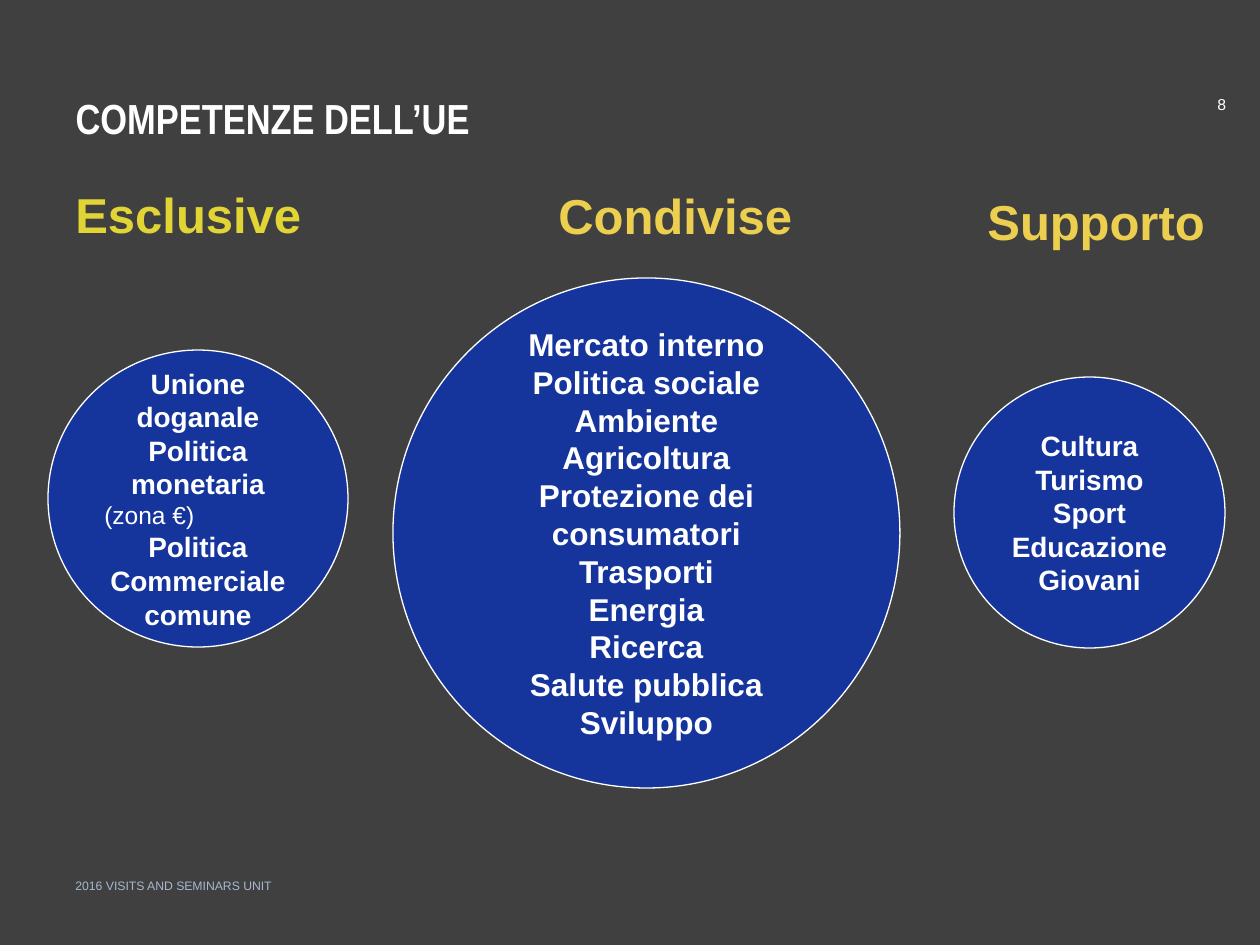
from typing import NamedTuple

from pptx import Presentation
from pptx.dml.color import RGBColor
from pptx.enum.shapes import MSO_SHAPE
from pptx.enum.text import MSO_ANCHOR, MSO_AUTO_SIZE, PP_ALIGN
from pptx.util import Emu, Inches, Pt

GREY = RGBColor(0x40, 0x40, 0x40)
WHITE = RGBColor(0xFF, 0xFF, 0xFF)
STEEL = RGBColor(0xA7, 0xB8, 0xCE)
LIME = RGBColor(0xE1, 0xD4, 0x35)
GOLD = RGBColor(0xEC, 0xCF, 0x4F)
BLUE = RGBColor(0x15, 0x35, 0x9C)
SCALE = Inches(1) / 126


class Box(NamedTuple):
    left: int
    top: int
    width: int
    height: int


class Head(NamedTuple):
    box: Box
    text: str
    color: RGBColor


class Disc(NamedTuple):
    box: Box
    size: int
    lines: list[str]


HEADS = [
    Head(Box(63, 173, 255, 72), "Esclusive", LIME),
    Head(Box(546, 174, 262, 72), "Condivise", GOLD),
    Head(Box(975, 180, 246, 72), "Supporto", GOLD),
]
DISCS = [
    Disc(Box(48, 350, 300, 297), 16, [
        "Unione doganale", "Politica monetaria", "(zona €)",
        "Politica", "Commerciale comune"]),
    Disc(Box(393, 278, 507, 510), 18, [
        "Mercato interno", "Politica sociale", "Ambiente", "Agricoltura",
        "Protezione dei consumatori", "Trasporti", "Energia", "Ricerca",
        "Salute pubblica", "Sviluppo"]),
    Disc(Box(954, 377, 271, 271), 16, [
        "Cultura", "Turismo", "Sport", "Educazione", "Giovani"]),
]


def px(value: int) -> Emu:
    return Emu(round(value * SCALE))


def place(box: Box) -> list[Emu]:
    return [px(value) for value in box]


def style(para, size: int, color: RGBColor, bold: bool, font: str, align) -> None:
    para.alignment = align
    for run in para.runs:
        run.font.size = Pt(size)
        run.font.name = font
        run.font.bold = bold
        run.font.color.rgb = color


def write(frame, text: str, *, size: int, color: RGBColor = WHITE,
          bold: bool = False, font: str = "Arial", align=PP_ALIGN.LEFT,
          anchor=MSO_ANCHOR.TOP, inset: int = 6, wrap: bool = True,
          pitch: float = 1.0) -> None:
    frame.text = text
    frame.word_wrap = wrap
    frame.auto_size = MSO_AUTO_SIZE.NONE
    frame.vertical_anchor = anchor
    frame.margin_top = px(inset)
    for para in frame.paragraphs:
        para.space_before = Pt(0)
        para.line_spacing = pitch
        style(para, size, color, bold, font, align)


def draw_head(slide, head: Head) -> None:
    shape = slide.shapes.add_textbox(*place(head.box))
    write(shape.text_frame, head.text, size=28, color=head.color,
          bold=True, inset=11, wrap=False)


def draw_disc(slide, disc: Disc) -> None:
    shape = slide.shapes.add_shape(MSO_SHAPE.OVAL, *place(disc.box))
    shape.shadow.inherit = False
    shape.fill.solid()
    shape.fill.fore_color.rgb = BLUE
    shape.line.color.rgb = WHITE
    shape.line.width = Pt(0.75)
    write(shape.text_frame, "\n".join(disc.lines), size=disc.size, bold=True,
          align=PP_ALIGN.CENTER, anchor=MSO_ANCHOR.MIDDLE,
          pitch=Pt(disc.size * 1.2))
    for para in shape.text_frame.paragraphs:
        if para.text.startswith("("):
            style(para, 14, WHITE, False, "Arial", PP_ALIGN.LEFT)
            para.line_spacing = Pt(16.8)


def main() -> None:
    deck = Presentation()
    deck.slide_width, deck.slide_height = Inches(10), Inches(7.5)
    slide = deck.slides.add_slide(deck.slide_layouts[5])
    fill = slide.background.fill
    fill.solid()
    fill.fore_color.rgb = GREY

    foot = slide.shapes.add_textbox(*place(Box(63, 872, 975, 33)))
    write(foot.text_frame, "2016 VISITS AND SEMINARS UNIT", size=7, color=STEEL)
    page = slide.shapes.add_textbox(*place(Box(1205, 89, 55, 43)))
    write(page.text_frame, "8", size=9)

    title = slide.shapes.title
    title.left, title.top, title.width, title.height = place(Box(63, 81, 1027, 77))
    write(title.text_frame, "COMPETENZE DELL’UE", size=24, bold=True,
          font="Arial Narrow", inset=11)

    for head in HEADS:
        draw_head(slide, head)
    for disc in DISCS:
        draw_disc(slide, disc)
    deck.save("out.pptx")


if __name__ == "__main__":
    main()
